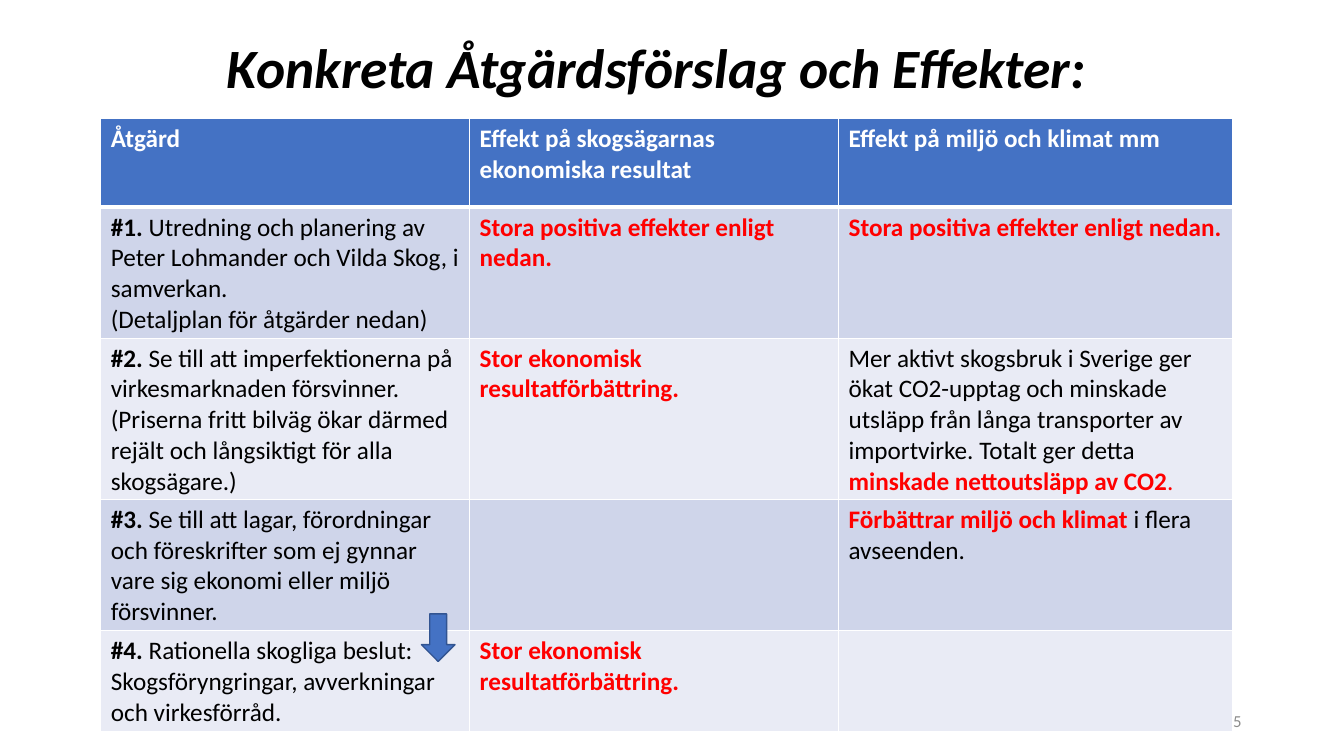
from lxml.etree import SubElement
from pptx import Presentation
from pptx.dml.color import RGBColor
from pptx.enum.shapes import MSO_SHAPE
from pptx.enum.text import MSO_ANCHOR, MSO_AUTO_SIZE, PP_ALIGN
from pptx.oxml.ns import qn
from pptx.util import Pt

# Content: a cell is a list of paragraphs, a paragraph a list of (style, text)
TITLE = "Konkreta Åtgärdsförslag och Effekter:"
PAGE = "5"
GAIN = [[("key", "Stor ekonomisk resultatförbättring.")]]
BOTH = [[("key", "Stora positiva effekter enligt nedan.")]]
ROWS = [
    [
        [[("head", "Åtgärd")]],
        [[("head", "Effekt på skogsägarnas ekonomiska resultat")]],
        [[("head", "Effekt på miljö och klimat mm")]],
    ],
    [
        [[("num", "#1. "),
          ("body", "Utredning och planering av Peter Lohmander och Vilda Skog, "
                   "i samverkan.")],
         [("body", "(Detaljplan för åtgärder nedan)")]],
        BOTH,
        BOTH,
    ],
    [
        [[("num", "#2. "),
          ("body", "Se till att imperfektionerna på virkesmarknaden försvinner. "
                   "(Priserna fritt bilväg ökar därmed rejält och långsiktigt "
                   "för alla skogsägare.)")]],
        GAIN,
        [[("body", "Mer aktivt skogsbruk i Sverige ger ökat CO2-upptag och "
                   "minskade utsläpp från långa transporter av importvirke. "
                   "Totalt ger detta "),
          ("key", "minskade nettoutsläpp av CO2"),
          ("stop", ".")]],
    ],
    [
        [[("num", "#3. "),
          ("body", "Se till att lagar, förordningar och föreskrifter som ej "
                   "gynnar vare sig ekonomi eller miljö försvinner.")]],
        [],
        [[("key", "Förbättrar miljö och klimat "),
          ("body", "i flera avseenden.")]],
    ],
    [
        [[("num", "#4. "),
          ("body", "Rationella skogliga beslut: Skogsföryngringar, "
                   "avverkningar och virkesförråd.")]],
        GAIN,
        [],
    ],
]

# Look
HUES = {"white": "FFFFFF", "black": "000000", "red": "FF0000", "blue": "4472C4",
        "edge": "325491", "gray": "8C8C8C", "odd": "CFD5EA", "even": "E9EBF5"}
STYLES = {
    "title": ("black", {"size": Pt(39.6), "bold": True, "italic": True}),
    "page": ("gray", {"size": Pt(12), "bold": False}),
    "head": ("white", {"size": Pt(18), "bold": True}),
    "num": ("black", {"size": Pt(18), "bold": True}),
    "body": ("black", {"size": Pt(18), "bold": False}),
    "key": ("red", {"size": Pt(18), "bold": True}),
    "stop": ("red", {"size": Pt(18), "bold": False}),
}
WIDTHS = [263.5, 263.5, 281.5]
HIGH = 63.4


def hue(name):
    return RGBColor.from_string(HUES[name])


def put(item, vals):
    for name, val in vals.items():
        setattr(item, name, val)


def write(frame, paras):
    for i, runs in enumerate(paras):
        para = frame.add_paragraph() if i else frame.paragraphs[0]
        for style, text in runs:
            run = para.add_run()
            run.text = text
            tint, vals = STYLES[style]
            put(run.font, {"name": "Calibri", **vals})
            run.font.color.rgb = hue(tint)


def border(cell, side, width):
    line = SubElement(cell._tc.get_or_add_tcPr(), qn("a:ln" + side),
                      w=str(Pt(width)))
    fill = SubElement(line, qn("a:solidFill"))
    SubElement(fill, qn("a:srgbClr"), val=HUES["white"])


deck = Presentation()
put(deck, {"slide_width": Pt(960), "slide_height": Pt(540)})
slide = deck.slides.add_slide(deck.slide_layouts[5])
shapes = slide.shapes

# Title
title = shapes.title
put(title, {"left": Pt(72), "top": Pt(23.8), "width": Pt(794), "height": Pt(53.3)})
put(title.text_frame, {"word_wrap": True, "auto_size": MSO_AUTO_SIZE.NONE,
                       "vertical_anchor": MSO_ANCHOR.MIDDLE})
write(title.text_frame, [[("title", TITLE)]])
put(title.text_frame.paragraphs[0],
    {"alignment": PP_ALIGN.CENTER, "line_spacing": 0.9})

# Page number
page = shapes.add_textbox(Pt(678), Pt(500.5), Pt(216), Pt(28.8)).text_frame
put(page, {"word_wrap": True, "vertical_anchor": MSO_ANCHOR.MIDDLE})
write(page, [[("page", PAGE)]])
page.paragraphs[0].alignment = PP_ALIGN.RIGHT

# Table: rows grow with their text
table = shapes.add_table(len(ROWS), len(WIDTHS), Pt(72), Pt(84.5),
                         Pt(sum(WIDTHS)), Pt(HIGH * len(ROWS))).table
for col, width in zip(table.columns, WIDTHS):
    col.width = Pt(width)
for r, row in enumerate(ROWS):
    table.rows[r].height = Pt(HIGH)
    band = "blue" if r == 0 else "odd" if r % 2 else "even"
    for c, paras in enumerate(row):
        cell = table.cell(r, c)
        sides = {"L": 1, "R": 1, "T": 3 if r == 1 else 1, "B": 1 if r else 3}
        for side, width in sides.items():
            border(cell, side, width)
        cell.fill.solid()
        cell.fill.fore_color.rgb = hue(band)
        write(cell.text_frame, paras)

# Arrow to the last measure
arrow = shapes.add_shape(MSO_SHAPE.DOWN_ARROW, Pt(301), Pt(438.5),
                         Pt(24), Pt(34))
arrow.shadow.inherit = False
arrow.fill.solid()
arrow.fill.fore_color.rgb = hue("blue")
arrow.line.color.rgb = hue("edge")
arrow.line.width = Pt(1)

deck.save("out.pptx")
